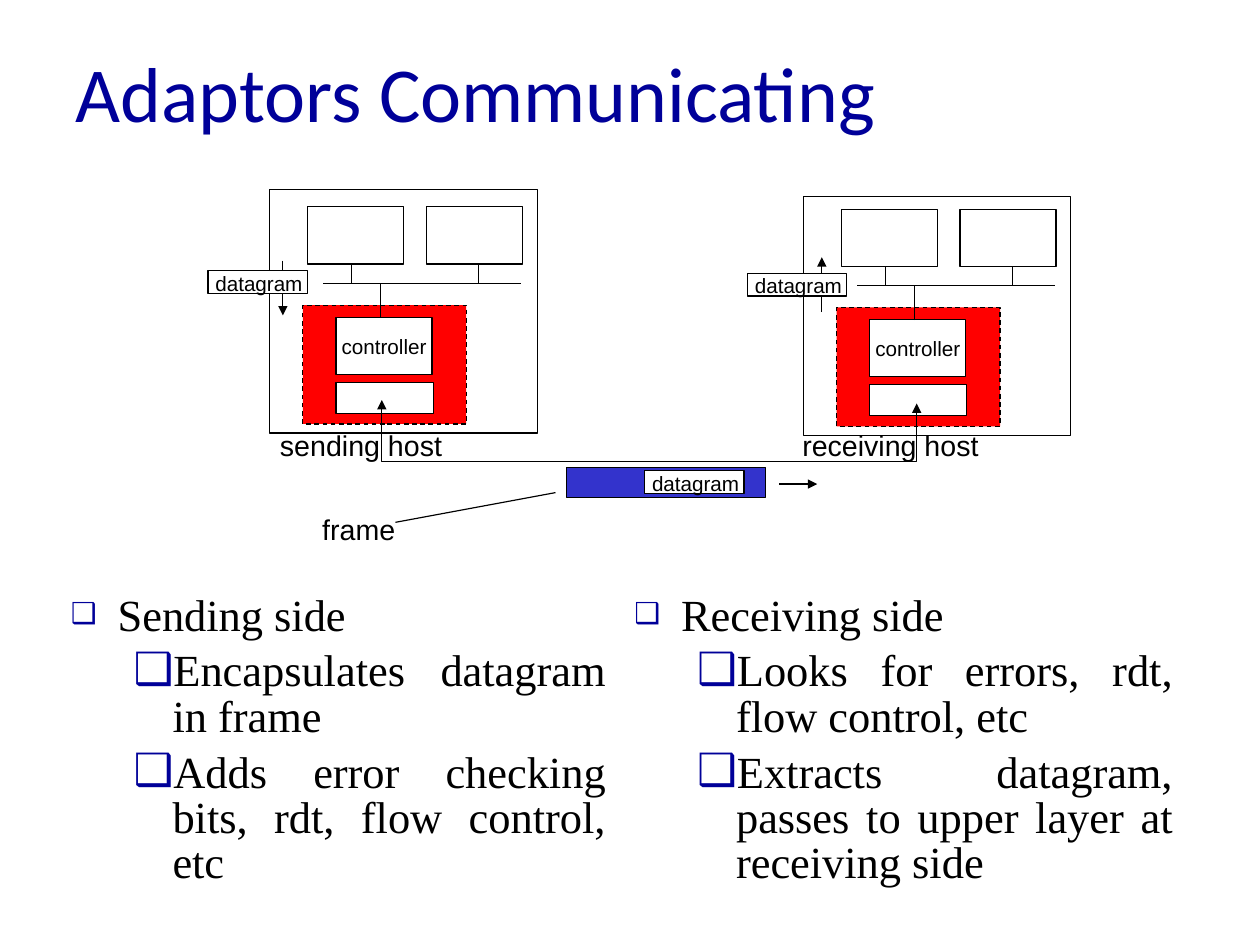
from dataclasses import dataclass

import lxml.etree
import pptx
import pptx.dml.color
import pptx.enum.dml
import pptx.enum.shapes
import pptx.enum.text
import pptx.oxml.ns
import pptx.util

CELL = 0.1  # inches per grid column and grid row
SLIDE_WIDTH, SLIDE_HEIGHT = pptx.util.Cm(28), pptx.util.Cm(21)
BLACK, WHITE, RED, BLUE, NAVY = "000000", "FFFFFF", "FF0000", "3333CC", "000099"
INSETS = (1.1, 0.6, 1.1, 0.6)
ALIGN = pptx.enum.text.PP_ALIGN
ANCHOR = pptx.enum.text.MSO_ANCHOR


@dataclass
class Area:
    column: float
    row: float
    columns: float
    rows: float


@dataclass
class Host:
    frame: Area
    adaptor_column: float
    adaptor_row: float
    datagram_column: float
    datagram_row: float
    arrow_column: float
    arrow_rows: tuple[float, float]
    name: str
    name_column: float


@dataclass
class Side:
    column: float
    columns: float
    heading: str
    duties: tuple[str, ...]


HOSTS = (
    Host(Area(23.6, 16.6, 23.4, 21.3), 26.5, 26.7, 18.2, 23.7,
         24.75, (22.8, 27.6), "sending host", 23.4),
    Host(Area(70.3, 17.2, 23.4, 20.9), 73.2, 26.9, 65.4, 23.9,
         71.9, (27.3, 22.5), "receiving host", 69.1),
)
SIDES = (
    Side(5.1, 49, "Sending side",
         ("Encapsulates datagram in frame",
          "Adds error checking bits, rdt, flow control, etc")),
    Side(54.4, 49.3, "Receiving side",
         ("Looks for errors, rdt, flow control, etc",
          "Extracts datagram, passes to upper layer at receiving side")),
)


def cells(count: float) -> int:
    return pptx.util.Inches(count * CELL)


def color(value: str) -> pptx.dml.color.RGBColor:
    return pptx.dml.color.RGBColor.from_string(value)


def add_child(parent, tag: str, **attributes: str):
    return lxml.etree.SubElement(parent, pptx.oxml.ns.qn(tag), attributes)


def place(shape, area: Area) -> None:
    shape.left, shape.top = cells(area.column), cells(area.row)
    shape.width, shape.height = cells(area.columns), cells(area.rows)


def write(shape, text: str, *, size: float, font: str = "Arial", ink: str = BLACK,
          align=ALIGN.LEFT, anchor=ANCHOR.TOP, insets=INSETS, new_para: bool = False):
    """Write one paragraph into the shape, as its first or as a further one."""
    frame = shape.text_frame
    frame.word_wrap = True
    frame.auto_size = pptx.enum.text.MSO_AUTO_SIZE.NONE
    frame.vertical_anchor = anchor
    frame.margin_left, frame.margin_top, frame.margin_right, frame.margin_bottom = map(cells, insets)
    para = frame.add_paragraph() if new_para else frame.paragraphs[0]
    para.alignment = align
    span = para.add_run()
    span.text = text
    span.font.name, span.font.size = font, pptx.util.Pt(size)
    span.font.color.rgb = color(ink)
    return para


def add_label(page, area: Area, text: str, **text_format) -> None:
    box = page.shapes.add_textbox(0, 0, 0, 0)
    place(box, area)
    write(box, text, **text_format)


def outline(shape, head: bool = False, tail: bool = False) -> None:
    shape.line.color.rgb = color(BLACK)
    shape.line.width = pptx.util.Pt(0.75)
    line = shape.element.spPr.find(pptx.oxml.ns.qn("a:ln"))
    for shown, tag in ((head, "a:headEnd"), (tail, "a:tailEnd")):
        if shown:
            add_child(line, tag, type="triangle")


def add_box(page, area: Area, fill: str = WHITE, dashed: bool = False):
    box = page.shapes.add_shape(pptx.enum.shapes.MSO_SHAPE.RECTANGLE, 0, 0, 0, 0)
    place(box, area)
    box.shadow.inherit = False
    box.fill.solid()
    box.fill.fore_color.rgb = color(fill)
    outline(box)
    if dashed:
        box.line.dash_style = pptx.enum.dml.MSO_LINE.DASH
    return box


def add_line(page, start: tuple[float, float], end: tuple[float, float], arrow: bool = False) -> None:
    line = page.shapes.add_connector(
        pptx.enum.shapes.MSO_CONNECTOR.STRAIGHT, *map(cells, start + end))
    outline(line, tail=arrow)
    add_child(line.element.spPr, "a:effectLst")


def add_datagram(page, column: float, row: float) -> None:
    box = add_box(page, Area(column, row, 8.7, 2))
    write(box, "datagram", size=13, insets=(0.65, 0, 0, 0))


def add_host(page, host: Host) -> None:
    add_box(page, host.frame)
    left, top = host.adaptor_column, host.adaptor_row
    bus_row = top - 1.9
    add_box(page, Area(left, top, 14.3, 10.4), RED, dashed=True)
    add_box(page, Area(left + 2.9, top + 6.75, 8.5, 2.7))
    controller = add_box(page, Area(left + 2.9, top + 1.05, 8.4, 5))
    write(controller, "controller", size=13, align=ALIGN.CENTER,
          anchor=ANCHOR.MIDDLE, insets=(0, 0, 0, 0))
    add_line(page, (left + 1.8, bus_row), (left + 19.1, bus_row))
    add_line(page, (left + 6.8, top + 1.1), (left + 6.8, bus_row))
    for box_offset, leg_offset in ((0.4, 4.25), (10.8, 15.4)):
        add_box(page, Area(left + box_offset, top - 8.6, 8.4, 5))
        add_line(page, (left + leg_offset, bus_row), (left + leg_offset, top - 3.6))
    add_label(page, Area(host.name_column, 36.85, 20, 4.2), host.name, size=18)
    start_row, end_row = host.arrow_rows
    add_line(page, (host.arrow_column, start_row), (host.arrow_column, end_row), arrow=True)
    add_datagram(page, host.datagram_column, host.datagram_row)


def add_link(page) -> None:
    """Draw the two-headed cable that joins the adaptors."""
    corners = [(cells(column), cells(row)) for column, row in
               ((33.4, 35), (33.4, 40.4), (80.2, 40.4), (80.2, 35.3))]
    builder = page.shapes.build_freeform(*corners[0])
    builder.add_line_segments(corners[1:], close=False)
    link = builder.convert_to_shape()
    link.shadow.inherit = False
    link.fill.background()
    outline(link, head=True, tail=True)


def add_bullet(para, indent: float, hanging: float, percent: int) -> None:
    para.line_spacing = 0.85
    para.space_before = pptx.util.Pt(6.6)
    properties = para._p.get_or_add_pPr()
    properties.set("marL", str(cells(indent)))
    properties.set("indent", str(-cells(hanging)))
    add_child(add_child(properties, "a:buClr"), "a:srgbClr", val=NAVY)
    add_child(properties, "a:buSzPct", val=str(percent * 1000))
    add_child(properties, "a:buFont", typeface="Arial")
    add_child(properties, "a:buChar", char="❑")


def add_side(page, side: Side) -> None:
    box = page.shapes.add_textbox(0, 0, 0, 0)
    place(box, Area(side.column, 51.45, side.columns, 25.6))
    text_format = {"size": 28, "font": "Times New Roman", "align": ALIGN.JUSTIFY}
    add_bullet(write(box, side.heading, **text_format), 4.1, 4.1, 65)
    for duty in side.duties:
        para = write(box, duty, new_para=True, **text_format)
        para.level = 1
        add_bullet(para, 8.9, 3.4, 100)


def main() -> None:
    deck = pptx.Presentation()
    deck.slide_width, deck.slide_height = SLIDE_WIDTH, SLIDE_HEIGHT
    deck.element.sldSz.attrib.pop("type", None)
    page = deck.slides.add_slide(deck.slide_layouts.get_by_name("Title Only"))
    title = page.shapes.title
    place(title, Area(5.5, 1.1, 93.7, 13.8))
    write(title, "Adaptors Communicating", size=49, font="Calibri", ink=NAVY, anchor=ANCHOR.MIDDLE)
    for side in SIDES:
        add_side(page, side)
    for host in HOSTS:
        add_host(page, host)
    add_link(page)
    add_box(page, Area(49.6, 40.9, 17.4, 2.6), BLUE)
    add_datagram(page, 56.4, 41.2)
    add_line(page, (68.2, 42.35), (71.5, 42.35), arrow=True)
    add_label(page, Area(27.1, 44.15, 10, 4.2), "frame", size=18)
    add_line(page, (34.6, 45.7), (48.6, 43.1))
    deck.save("out.pptx")


if __name__ == "__main__":
    main()
